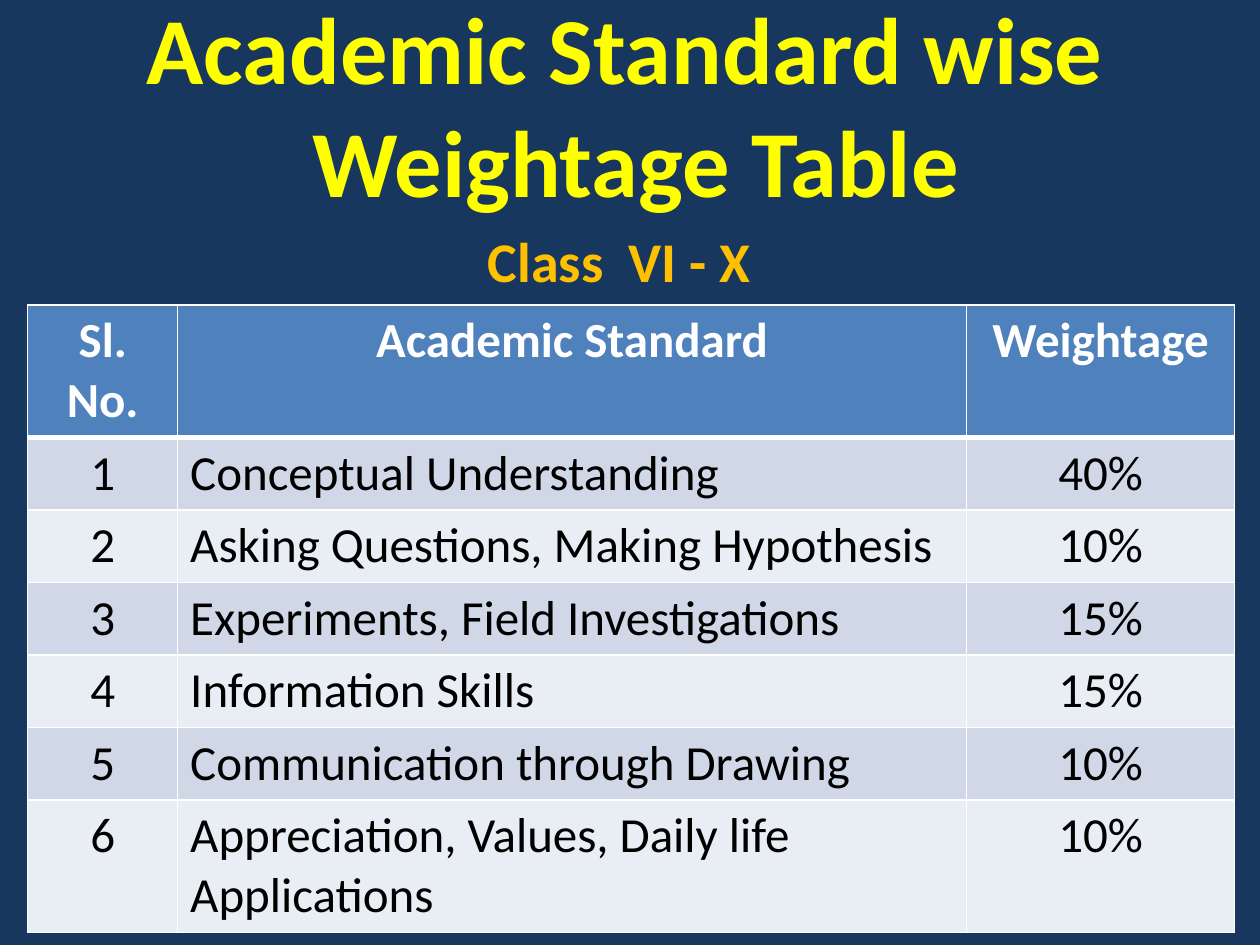
from dataclasses import dataclass

from lxml.etree import SubElement
from pptx import Presentation
from pptx.dml.color import RGBColor
from pptx.enum.text import MSO_ANCHOR as Anchor, MSO_AUTO_SIZE as AutoSize, PP_ALIGN as Align
from pptx.oxml.ns import qn
from pptx.util import Inches, Pt


@dataclass(frozen=True)
class Theme:
    font: str = "Calibri"
    background: str = "17375E"
    title: str = "FFFF00"
    subtitle: str = "FFC000"
    header_fill: str = "4F81BD"
    header_text: str = "FFFFFF"
    body_text: str = "000000"
    bands: tuple = ("D0D8E8", "E9EDF4")
    border: str = "FFFFFF"
    thin_line: int = 1
    thick_line: int = 3
    title_size: int = 54
    subtitle_size: int = 32
    table_size: int = 28


THEME = Theme()
TITLE_BOX = (0.17, 0.14, 9.75, 1.36)
SUBTITLE_BOX = (0.58, 1.75, 8.67, 0.64)
TABLE_BOX = (0.22, 2.42, 9.58, 4.93)
COLUMN_WIDTHS = (1.19, 6.26, 2.13)
COLUMN_ALIGNMENTS = (Align.CENTER, Align.LEFT, Align.CENTER)
TALL_ROW = 1.04
HEADERS = ("Sl. No.", "Academic Standard", "Weightage")
STANDARDS = (
    ("Conceptual Understanding", "40%"),
    ("Asking Questions, Making Hypothesis", "10%"),
    ("Experiments, Field Investigations", "15%"),
    ("Information Skills", "15%"),
    ("Communication through Drawing", "10%"),
    ("Appreciation, Values, Daily life Applications", "10%"),
)


def color(value):
    return RGBColor.from_string(value)


def format_paragraph(paragraph, size, text_color, bold, alignment):
    paragraph.alignment = alignment
    font = paragraph.font
    font.name = THEME.font
    font.size = Pt(size)
    font.bold = bold
    font.color.rgb = color(text_color)


def add_title(slide, box):
    title = slide.shapes.title
    title.left, title.top, title.width, title.height = map(Inches, box)
    frame = title.text_frame
    frame.text = "Academic Standard wise \vWeightage Table"
    frame.auto_size = AutoSize.NONE
    frame.vertical_anchor = Anchor.MIDDLE
    format_paragraph(frame.paragraphs[0], THEME.title_size, THEME.title, True, Align.CENTER)


def add_subtitle(slide, box):
    frame = slide.shapes.add_textbox(*map(Inches, box)).text_frame
    frame.word_wrap = True
    frame.auto_size = AutoSize.SHAPE_TO_FIT_TEXT
    frame.text = "Class  VI - X"
    format_paragraph(frame.paragraphs[0], THEME.subtitle_size, THEME.subtitle, True, Align.CENTER)


def set_borders(cell, top, bottom):
    properties = cell._tc.get_or_add_tcPr()
    widths = {"L": THEME.thin_line, "R": THEME.thin_line, "T": top, "B": bottom}
    for side, width in widths.items():
        line = SubElement(properties, qn(f"a:ln{side}"), w=str(Pt(width)))
        fill = SubElement(line, qn("a:solidFill"))
        SubElement(fill, qn("a:srgbClr"), val=THEME.border)


def format_cell(cell, row, alignment):
    header = row == 0
    top = THEME.thick_line if row == 1 else THEME.thin_line
    bottom = THEME.thick_line if header else THEME.thin_line
    set_borders(cell, top, bottom)
    cell.fill.solid()
    cell.fill.fore_color.rgb = color(THEME.header_fill if header else THEME.bands[(row - 1) % 2])
    format_paragraph(
        cell.text_frame.paragraphs[0],
        THEME.table_size,
        THEME.header_text if header else THEME.body_text,
        header,
        Align.CENTER if header else alignment,
    )


def add_weightage_table(slide, box):
    rows = [HEADERS]
    rows += [(str(number), *standard) for number, standard in enumerate(STANDARDS, 1)]
    table = slide.shapes.add_table(len(rows), len(HEADERS), *map(Inches, box)).table
    for column, width in zip(table.columns, COLUMN_WIDTHS):
        column.width = Inches(width)
    short_row = (box[3] - 2 * TALL_ROW) / (len(rows) - 2)
    for row, values in enumerate(rows):
        tall = row in (0, len(rows) - 1)
        table.rows[row].height = Inches(TALL_ROW if tall else short_row)
        for column, value in enumerate(values):
            cell = table.cell(row, column)
            cell.text = value
            format_cell(cell, row, COLUMN_ALIGNMENTS[column])


def main():
    presentation = Presentation()
    presentation.slide_width = Inches(10)
    presentation.slide_height = Inches(7.5)
    slide = presentation.slides.add_slide(presentation.slide_layouts.get_by_name("Title Only"))
    slide.background.fill.solid()
    slide.background.fill.fore_color.rgb = color(THEME.background)
    add_title(slide, TITLE_BOX)
    add_weightage_table(slide, TABLE_BOX)
    add_subtitle(slide, SUBTITLE_BOX)
    presentation.save("out.pptx")


if __name__ == "__main__":
    main()
